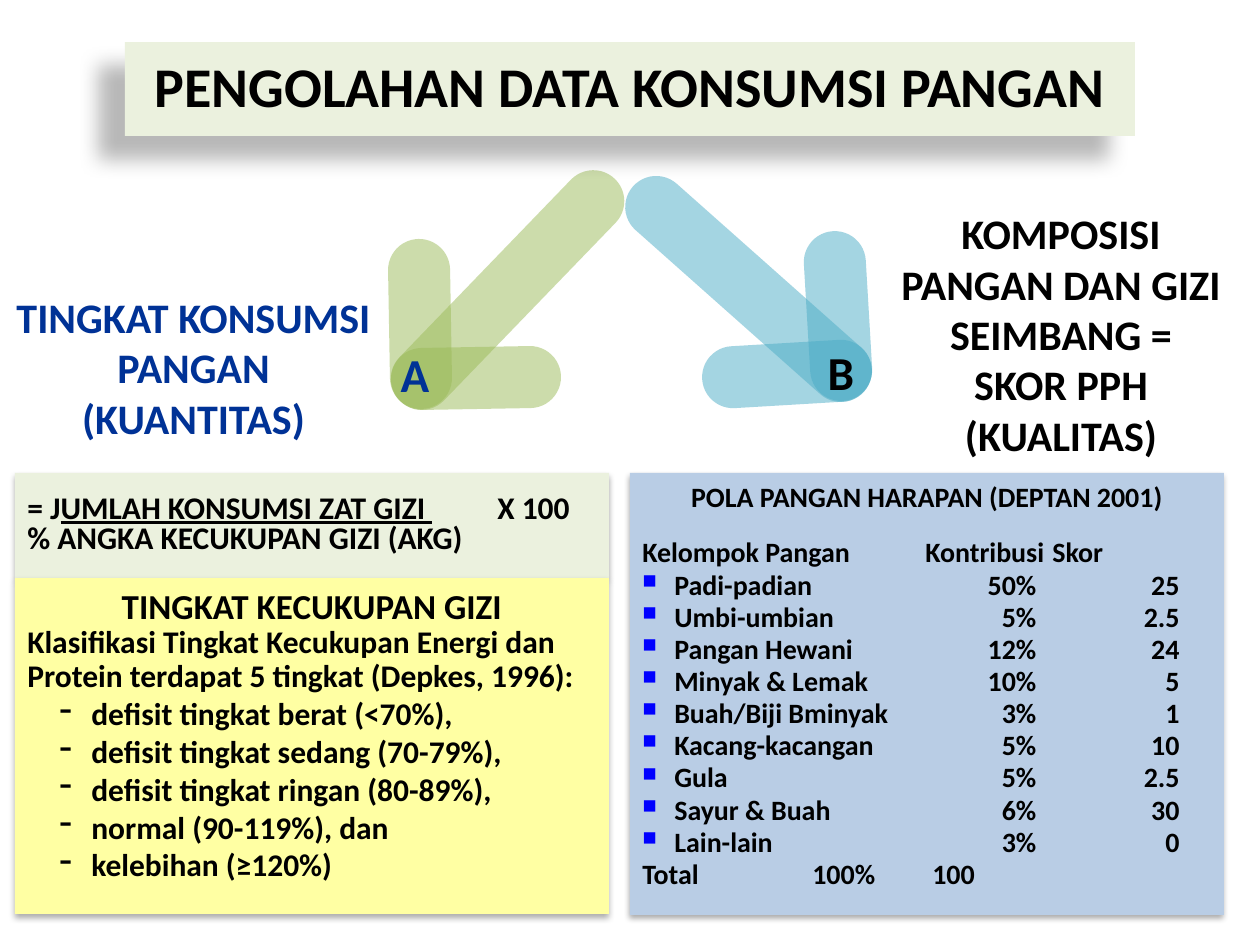
import pptx
import pptx.util
import pptx.dml.color
import pptx.enum.shapes
import pptx.enum.text
import pptx.oxml
import pptx.oxml.ns

HUES = {
    "ink": "000000", "navy": "003296", "green": "9BBB59", "teal": "4BACC6",
    "pale": "EBF1DE", "lemon": "FFFFA3", "sky": "B9CDE5", "mark": "0000FF",
}
ALIGN = pptx.enum.text.PP_ALIGN
ANCHOR = pptx.enum.text.MSO_ANCHOR
KIND = pptx.enum.shapes.MSO_SHAPE
SPACE = pptx.oxml.ns.nsdecls("a")


def emu(px):
    return pptx.util.Emu(round(px * 914400 / 126))


def rgb(name):
    return pptx.dml.color.RGBColor.from_string(HUES[name])


def node(xml):
    return pptx.oxml.parse_xml(xml.replace(">", f" {SPACE}>", 1))


class Deck:
    """Holds the style and the current slide, and draws each kind of element."""

    def __init__(self, font, wide, high):
        self.font = font
        self.prs = pptx.Presentation()
        self.prs.slide_width, self.prs.slide_height = emu(wide), emu(high)
        self.slide = self.prs.slides.add_slide(self.prs.slide_layouts[6])

    def form(self, kind, box, hue):
        shape = self.slide.shapes.add_shape(kind, *map(emu, box))
        shape.shadow.inherit = False
        shape.fill.solid()
        shape.fill.fore_color.rgb = rgb(hue)
        shape.line.fill.background()
        return shape

    def bar(self, box, turn, hue):
        shape = self.form(KIND.ROUNDED_RECTANGLE, box, hue)
        shape.adjustments[0] = 0.5
        shape.rotation = turn
        color = shape.fill._xPr.find(".//" + pptx.oxml.ns.qn("a:srgbClr"))
        color.append(node('<a:alpha val="50000"></a:alpha>'))

    def panel(self, box, hue, blur=3.5, dist=2.2, turn=90, alpha=32, anchor=ANCHOR.TOP):
        shape = self.form(KIND.RECTANGLE, box, hue)
        glow = shape._element.spPr.find(pptx.oxml.ns.qn("a:effectLst"))
        glow.append(node(
            f'<a:outerShdw blurRad="{round(blur * 12700)}" dist="{round(dist * 12700)}"'
            f' dir="{turn * 60000}" algn="ctr" rotWithShape="0"><a:srgbClr val="000000">'
            f'<a:alpha val="{alpha * 1000}"/></a:srgbClr></a:outerShdw>'))
        frame = shape.text_frame
        frame.word_wrap = True
        frame.vertical_anchor = anchor
        return frame

    def label(self, box, lines, size, hue="ink", wrap=True, anchor=ANCHOR.BOTTOM):
        frame = self.slide.shapes.add_textbox(*map(emu, box)).text_frame
        frame.word_wrap = wrap
        frame.vertical_anchor = anchor
        if wrap:
            frame.margin_left = frame.margin_right = 0
        for line in lines:
            self.line(frame, line, size, hue, align=ALIGN.CENTER)

    def line(self, frame, text, size, hue="ink", align=ALIGN.LEFT, lead=None,
             before=0, mark=None, left=0, tabs=()):
        para = frame.paragraphs[0]
        if para.runs:
            para = frame.add_paragraph()
        para.text = text
        para.alignment = align
        prop = para._p.get_or_add_pPr()
        if mark:
            sign, scale, tint = mark
            prop.set("marL", str(emu(left)))
            prop.set("indent", str(-emu(32)))
            prop.append(node(f'<a:buClr><a:srgbClr val="{HUES[tint]}"/></a:buClr>'))
            prop.append(node(f'<a:buSzPct val="{scale * 1000}"></a:buSzPct>'))
            prop.append(node(f'<a:buChar char="{sign}"></a:buChar>'))
        if tabs:
            stops = "".join(f'<a:tab pos="{emu(at)}" algn="{side}"/>' for at, side in tabs)
            prop.append(node(f"<a:tabLst>{stops}</a:tabLst>"))
        if lead:
            para.line_spacing = lead
        para.space_before = pptx.util.Pt(before)
        for run in para.runs:
            self.style(run, size, hue)
        return para

    def style(self, run, size, hue="ink"):
        run.font.name = self.font
        run.font.size = pptx.util.Pt(size)
        run.font.bold = True
        run.font.color.rgb = rgb(hue)


def main():
    deck = Deck("Calibri", 1260, 945)
    for box, turn, hue in [
        ((353, 259, 309, 62), 134, "green"),
        ((391, 347, 170, 62), 179, "green"),
        ((335, 293, 170, 62), 89, "green"),
        ((594, 258, 309, 62), 41.6, "teal"),
        ((753, 285, 170, 62), 86.6, "teal"),
        ((702, 343, 170, 62), 356.6, "teal"),
    ]:
        deck.bar(box, turn, hue)

    deck.label((0, 284, 387, 165), ["TINGKAT KONSUMSI PANGAN", "(KUANTITAS)"], 24, "navy")
    deck.label((388, 338, 54, 71), ["A"], 27, "navy", False, ANCHOR.MIDDLE)
    deck.label((815, 336, 52, 71), ["B"], 27, "ink", False, ANCHOR.MIDDLE)

    title = deck.panel((125, 42, 1010, 94), "pale", 11.8, 19.7, 141, 28, ANCHOR.MIDDLE)
    deck.line(title, "PENGOLAHAN DATA KONSUMSI PANGAN", 32, align=ALIGN.CENTER, lead=0.9)
    deck.label((883, 199, 356, 267), ["KOMPOSISI PANGAN DAN GIZI SEIMBANG =",
                                      "SKOR PPH", "(KUALITAS)"], 24)

    ratio = deck.panel((15, 473, 594, 105), "pale", anchor=ANCHOR.MIDDLE)
    top = deck.line(ratio, "= J", 18, lead=0.8, tabs=[(470, "l")])
    for text, under in [("UMLAH KONSUMSI ZAT GIZI ", True), ("\tX 100", False)]:
        run = top.add_run()
        run.text = text
        deck.style(run, 18)
        run.font.underline = under
    deck.line(ratio, "% ANGKA KECUKUPAN GIZI (AKG)", 18, lead=0.8)

    level = deck.panel((15, 578, 594, 336), "lemon")
    deck.line(level, "TINGKAT KECUKUPAN GIZI", 20, align=ALIGN.CENTER)
    deck.line(level, "Klasifikasi Tingkat Kecukupan Energi dan Protein terdapat "
                     "5 tingkat (Depkes, 1996):", 18, lead=0.9)
    for text in ["defisit tingkat berat (<70%),", "defisit tingkat sedang (70-79%),",
                 "defisit tingkat ringan (80-89%),", "normal (90-119%), dan",
                 "kelebihan (≥120%)"]:
        deck.line(level, text, 18, mark=("-", 120, "ink"), left=64)

    score = deck.panel((630, 473, 594, 442), "sky")
    deck.line(score, "POLA PANGAN HARAPAN (DEPTAN 2001)", 16, align=ALIGN.CENTER)
    deck.line(score, "Kelompok Pangan\tKontribusi\tSkor", 16, lead=1.5, before=3,
              tabs=[(283, "l"), (410, "l")])
    for row in [
        ("Padi-padian", "50%", "25"), ("Umbi-umbian", "5%", "2.5"),
        ("Pangan Hewani", "12%", "24"), ("Minyak & Lemak", "10%", "5"),
        ("Buah/Biji Bminyak", "3%", "1"), ("Kacang-kacangan", "5%", "10"),
        ("Gula", "5%", "2.5"), ("Sayur & Buah", "6%", "30"), ("Lain-lain", "3%", "0"),
    ]:
        deck.line(score, "\t".join(row), 16, lead=0.8, before=3, left=32,
                  mark=("■", 70, "mark"), tabs=[(394, "r"), (551, "r")])
    deck.line(score, "Total\t100%\t100", 16, lead=0.8, before=3,
              tabs=[(170, "l"), (290, "l")])
    deck.prs.save("out.pptx")


if __name__ == "__main__":
    main()
